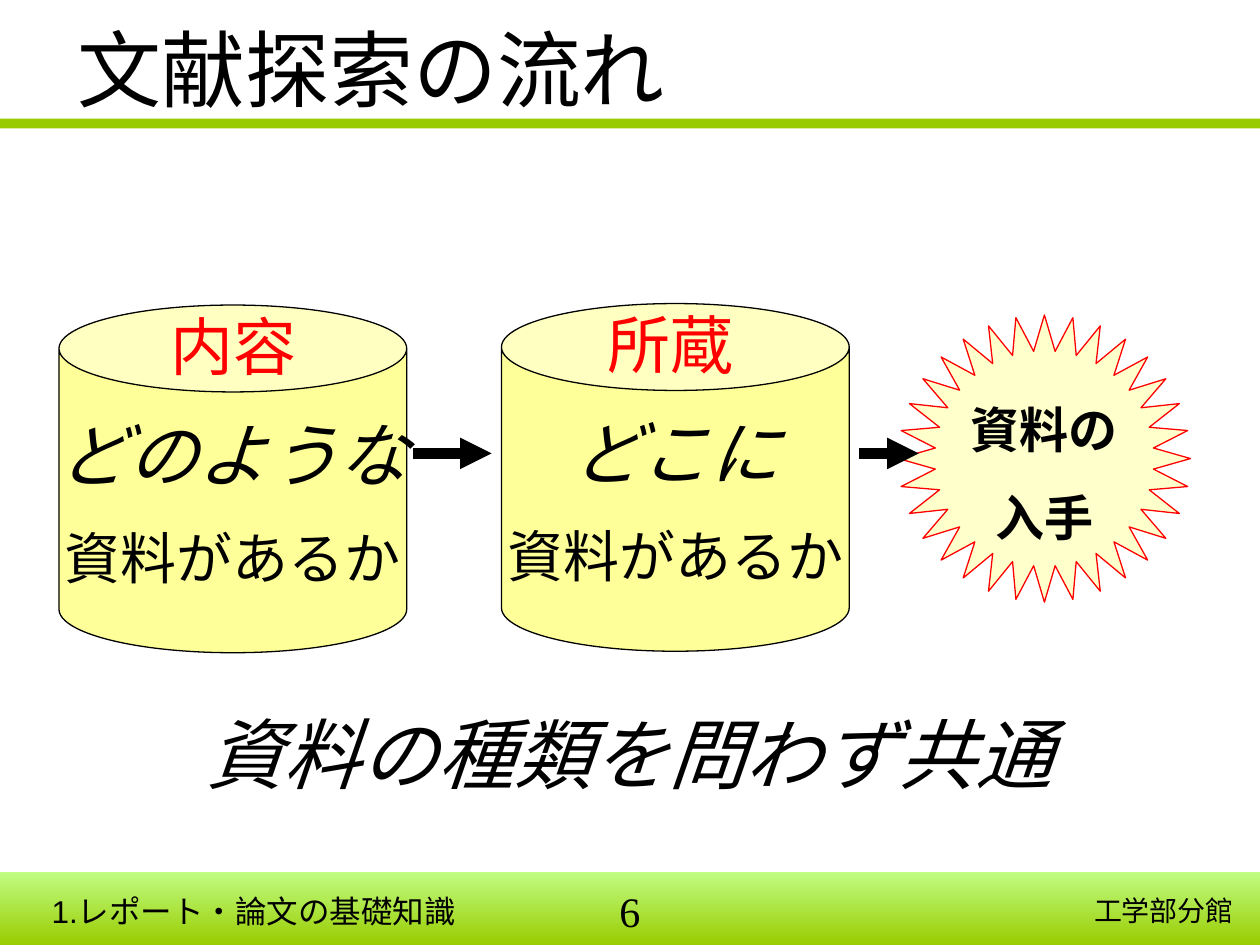
from pptx import Presentation
from pptx import util as u
from pptx.dml.color import RGBColor
from pptx.enum import shapes, text
from pptx.oxml.ns import qn
from lxml import etree

BLACK = RGBColor(0x00, 0x00, 0x00)
RED = RGBColor(0xFF, 0x00, 0x00)
GREEN = RGBColor(0x99, 0xCC, 0x00)
LIGHT_GREEN = RGBColor(0xC0, 0xFD, 0x83)
YELLOW = RGBColor(0xFF, 0xFF, 0x99)
CREAM = RGBColor(0xFF, 0xFF, 0xCC)

LEFT, CENTER, RIGHT = text.PP_ALIGN.LEFT, text.PP_ALIGN.CENTER, text.PP_ALIGN.RIGHT
SHAPE = shapes.MSO_SHAPE
MIDDLE, TOP = text.MSO_ANCHOR.MIDDLE, text.MSO_ANCHOR.TOP


def cm(*values):
    return [u.Cm(value) for value in values]


def set_frame(frame, anchor=TOP, wrap=True):
    frame.auto_size = text.MSO_AUTO_SIZE.NONE
    frame.word_wrap = wrap
    frame.vertical_anchor = anchor


def write(para, words, size, font="Arial", color=BLACK, align=LEFT,
          bold=False, italic=False, before=None, spacing=None):
    """Add one formatted line of text to a paragraph."""
    para.alignment = align
    if before:
        para.space_before = u.Pt(before)
    if spacing:
        para.line_spacing = spacing
    span = para.add_run()
    span.text = words
    span.font.size = u.Pt(size)
    span.font.name = font
    span.font.color.rgb = color
    span.font.bold = bold
    span.font.italic = italic


def add_text(page, box, words, size, anchor=TOP, **style):
    frame = page.shapes.add_textbox(*cm(*box)).text_frame
    set_frame(frame, anchor)
    write(frame.paragraphs[0], words, size, **style)


def add_shape(page, kind, box, fill=None, line=None):
    shape = page.shapes.add_shape(kind, *cm(*box))
    shape.shadow.inherit = False
    if fill is not None:
        shape.fill.solid()
        shape.fill.fore_color.rgb = fill
    if line is None:
        shape.line.fill.background()
    else:
        shape.line.color.rgb = line
        shape.line.width = u.Pt(0.75)
    return shape


def add_arrow(page, start, end, y):
    arrow = page.shapes.add_connector(shapes.MSO_CONNECTOR.STRAIGHT, *cm(start, y, end, y))
    arrow.line.color.rgb = BLACK
    arrow.line.width = u.Pt(6)
    etree.SubElement(arrow.line._get_or_add_ln(), qn("a:tailEnd"), type="triangle")
    etree.SubElement(arrow._element.spPr, qn("a:effectLst"))


def add_heading(page, box, words):
    """Title with a green rule near its lower edge."""
    left, top, width, height = box
    add_shape(page, SHAPE.RECTANGLE, (0, top + height - 0.35, 25.4, 0.2), GREEN)
    title = page.shapes.title
    title.left, title.top, title.width, title.height = cm(*box)
    set_frame(title.text_frame, MIDDLE)
    write(title.text_frame.paragraphs[0], words, 48, font="Calibri")


def add_footer(page, box):
    """Gradient band with section name, page number and library name."""
    left, top, width, height = box
    band = add_shape(page, SHAPE.RECTANGLE, box)
    band.fill.gradient()
    band.fill.gradient_angle = 270
    for stop, color in zip(band.fill.gradient_stops, (LIGHT_GREEN, GREEN)):
        stop.color.rgb = color
    add_text(page, (left + 0.79, top + 0.28, 9.6, 1), "1.レポート・論文の基礎知識", 18)
    add_text(page, (left + width / 2 - 1, top + 0.15, 2, 1), "6", 24,
             font="Times New Roman", align=CENTER)
    add_text(page, (left + width - 4.09, top + 0.3, 3.81, 0.84), "工学部分館", 16,
             font="Times New Roman", align=RIGHT)


def add_store(page, box, label, question, label_shift, label_align):
    """Cylinder with a red label on its lid and a question on its body."""
    left, top, width, height = box
    can = add_shape(page, SHAPE.CAN, box, YELLOW, BLACK)
    can.adjustments[0] = 0.25
    frame = can.text_frame
    set_frame(frame, MIDDLE, wrap=False)
    write(frame.paragraphs[0], question, 40, align=CENTER, italic=True)
    write(frame.add_paragraph(), "資料があるか", 32, align=CENTER, before=16)
    add_text(page, (left + label_shift, top + 0.02, 5.99, 1.57), label, 36,
             anchor=MIDDLE, color=RED, align=label_align)


def add_goal(page, box, lines):
    """Red-edged star with the result of the search."""
    star = add_shape(page, SHAPE.STAR_32_POINT, box, CREAM, RED)
    star.adjustments[0] = 0.375
    frame = star.text_frame
    set_frame(frame, MIDDLE, wrap=False)
    for index, line in enumerate(lines):
        para = frame.add_paragraph() if index else frame.paragraphs[0]
        write(para, line, 28, align=CENTER, bold=True, spacing=1.5)


def main():
    deck = Presentation()
    deck.slide_width, deck.slide_height = cm(25.4, 19.05)
    page = deck.slides.add_slide(deck.slide_layouts[5])

    # Page furniture
    add_footer(page, (0, 17.58, 25.4, 1.47))
    add_heading(page, (1.3, 0, 22.86, 2.74), "文献探索の流れ")

    # Search flow
    add_goal(page, (18.11, 6.35, 5.89, 5.79), ["資料の", "入手"])
    for start, end in ((8.33, 9.91), (17.32, 18.52)):
        add_arrow(page, start, end, 9.14)
    add_store(page, (1.19, 6.15, 7.01, 7.01), "内容", "どのような", 1.99, LEFT)
    add_store(page, (10.11, 6.12, 7.01, 7.01), "所蔵", "どこに", 0.41, CENTER)

    # Closing message
    add_text(page, (1.17, 14.12, 23.06, 2.51), "資料の種類を問わず共通", 44,
             font="Calibri", align=CENTER, italic=True)

    deck.save("out.pptx")


if __name__ == "__main__":
    main()
